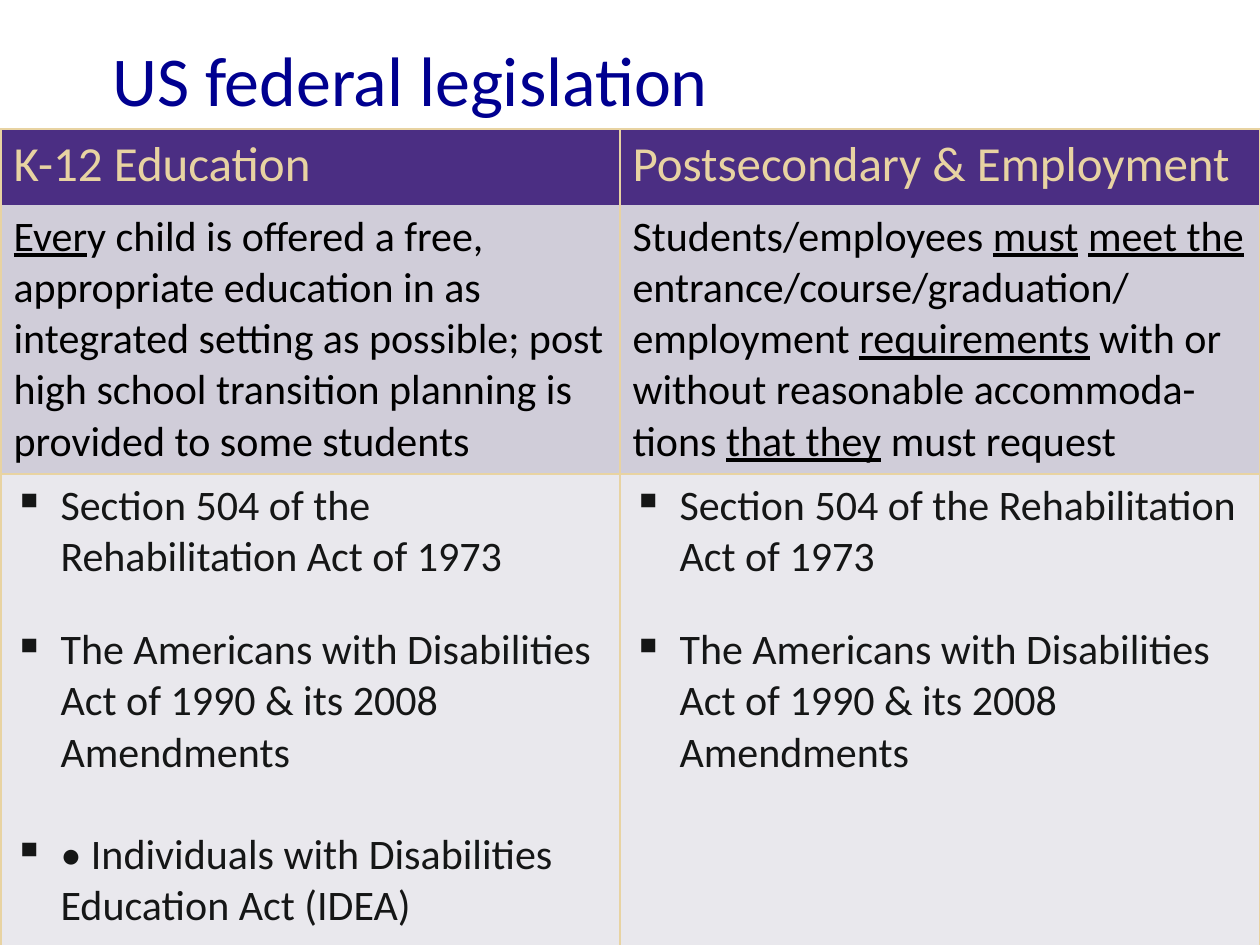
from lxml.etree import SubElement
from pptx import Presentation
from pptx.dml.color import RGBColor
from pptx.enum.text import MSO_ANCHOR
from pptx.oxml.ns import qn
from pptx.util import Pt

# Content: text between underscores is underlined
TITLE = "US federal legislation"
HEADINGS = ["K-12 Education", "Postsecondary & Employment"]
PRINCIPLES = [
    "_Ever_y child is offered a free, appropriate education in as integrated setting "
    "as possible; post high school transition planning is provided to some students",
    "Students/employees _must_ _meet the _entrance/course/graduation/ employment "
    "_requirements_ with or without reasonable accommoda-tions _that they_ must request",
]
SHARED_LAWS = [
    "Section 504 of the Rehabilitation Act of 1973",
    "The Americans with Disabilities Act of 1990 & its 2008 Amendments",
]
LAWS = [
    SHARED_LAWS + ["• Individuals with Disabilities Education Act (IDEA)"],
    SHARED_LAWS,
]
COLORS = {
    "title": "000090", "gold": "E8D3A2", "purple": "4B2E83", "black": "000000",
    "ink": "151616", "mid": "D0CDD9", "light": "E9E8ED",
}

# Layout in px
EMU_PER_PX = 914400 // 126
TITLE_BOX = (100, 31, 1071, 95)
TABLE_AT = (1, 129)
COLUMN_WIDTHS = [619, 640]
ROW_HEIGHTS = [76, 269, 479]
BULLET_INDENT = 47

# One entry per table row: texts, fill, text format, whether top/bottom lines show
ROWS = [
    ([[text] for text in HEADINGS], "purple", dict(size=28, color="gold"), (True, False)),
    ([[text] for text in PRINCIPLES], "mid", dict(size=24, color="black"), (False, True)),
    (LAWS, "light", dict(size=24, color="ink", gaps=(0, 24, 29), bullet="▪"), (True, True)),
]


def px(length):
    return length * EMU_PER_PX


def rgb(name):
    return RGBColor.from_string(COLORS[name])


def add_text(frame, paragraphs, size, color, gaps=(0,), bullet=None):
    frame.word_wrap = True
    for index, text in enumerate(paragraphs):
        paragraph = frame.paragraphs[0] if index == 0 else frame.add_paragraph()
        paragraph.space_before = Pt(gaps[index])
        for part, words in enumerate(text.split("_")):
            if not words:
                continue
            run = paragraph.add_run()
            run.text = words
            run.font.name = "Calibri"
            run.font.size = Pt(size)
            run.font.bold = False
            run.font.underline = part % 2 == 1
            run.font.color.rgb = rgb(color)
        if bullet:
            properties = paragraph._p.get_or_add_pPr()
            properties.set("marL", str(px(BULLET_INDENT)))
            properties.set("indent", str(-px(BULLET_INDENT)))
            SubElement(properties, qn("a:buChar"), char=bullet)


def set_borders(cell, top, bottom):
    properties = cell._tc.get_or_add_tcPr()
    sides = {"lnL": True, "lnR": True, "lnT": top, "lnB": bottom}
    for position, (side, visible) in enumerate(sides.items()):
        line = SubElement(properties, qn(f"a:{side}"), w=str(Pt(1)))
        if visible:
            fill = SubElement(line, qn("a:solidFill"))
            SubElement(fill, qn("a:srgbClr"), val=COLORS["gold"])
        else:
            SubElement(line, qn("a:noFill"))
        properties.insert(position, line)  # lines come before the cell fill


presentation = Presentation()
presentation.slide_width, presentation.slide_height = px(1260), px(945)
slide = presentation.slides.add_slide(presentation.slide_layouts[6])

# Title
title = slide.shapes.add_textbox(*map(px, TITLE_BOX)).text_frame
title.vertical_anchor = MSO_ANCHOR.MIDDLE
add_text(title, [TITLE], size=40, color="title")

# Legislation table
table = slide.shapes.add_table(
    len(ROWS), len(COLUMN_WIDTHS), *map(px, TABLE_AT),
    px(sum(COLUMN_WIDTHS)), px(sum(ROW_HEIGHTS)),
).table
for column, width in zip(table.columns, COLUMN_WIDTHS):
    column.width = px(width)
for row, height, (texts, fill, text_format, lines) in zip(table.rows, ROW_HEIGHTS, ROWS):
    row.height = px(height)
    for cell, paragraphs in zip(row.cells, texts):
        cell.fill.solid()
        cell.fill.fore_color.rgb = rgb(fill)
        set_borders(cell, *lines)
        add_text(cell.text_frame, paragraphs, **text_format)

presentation.save("out.pptx")
